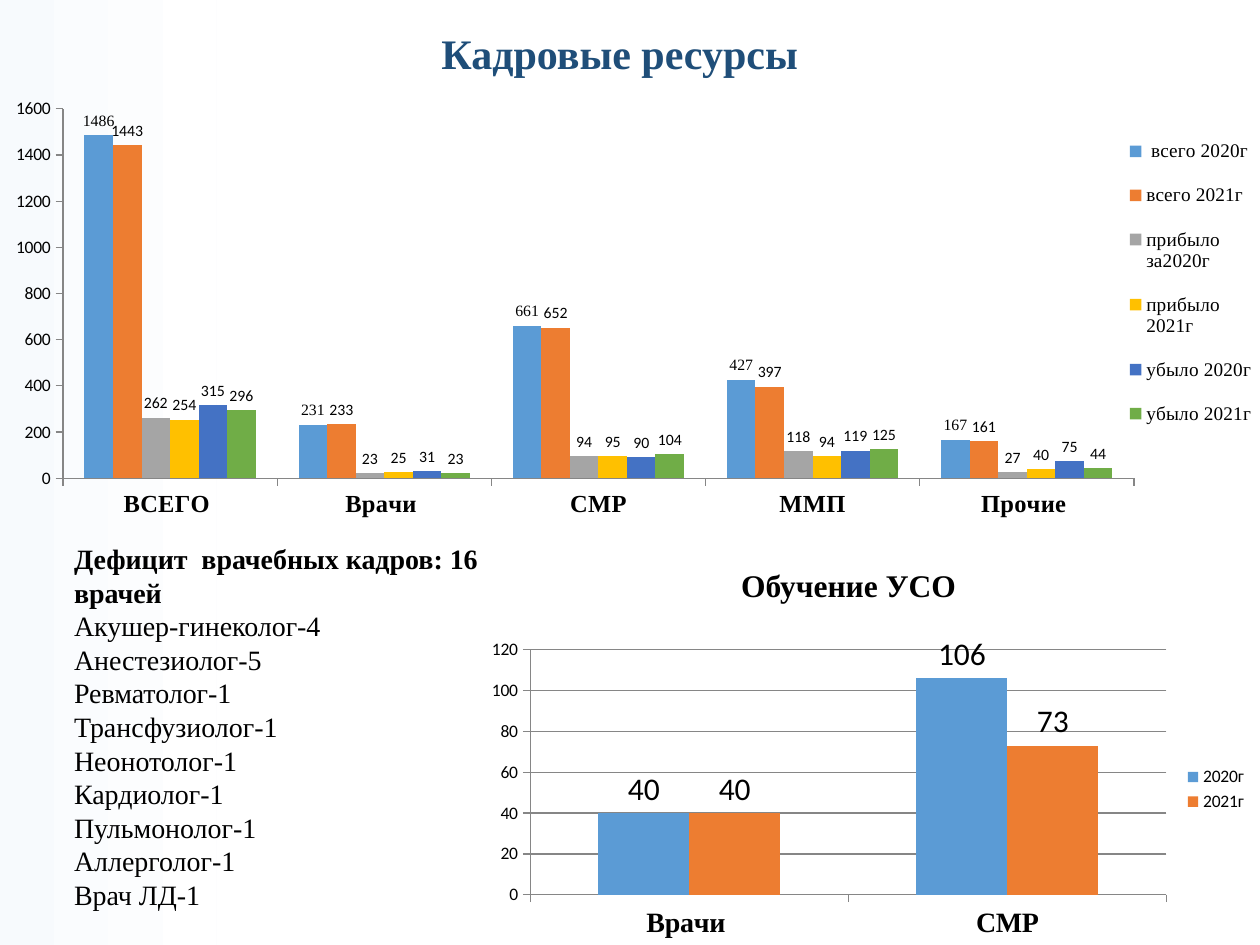
import pptx
import pptx.util
import pptx.chart.data
import pptx.dml.color
import pptx.enum.chart
import pptx.enum.shapes
import pptx.enum.text
import pptx.oxml
from pptx.util import Inches

SERIF = "Times New Roman"
SANS = "Calibri"
COLORS = ["5B9BD5", "ED7D31", "A5A5A5", "FFC000", "4472C4", "70AD47"]

STAFF_CATS = ["ВСЕГО ", "Врачи ", "СМР", "ММП", "Прочие "]
STAFF = {
    " всего 2020г": [1486, 231, 661, 427, 167],
    "всего 2021г": [1443, 233, 652, 397, 161],
    "прибыло  за2020г": [262, 23, 94, 118, 27],
    "прибыло 2021г": [254, 25, 95, 94, 40],
    "убыло 2020г": [315, 31, 90, 119, 75],
    "убыло 2021г": [296, 23, 104, 125, 44],
}
STUDY_CATS = ["Врачи ", "СМР"]
STUDY = {"2020г": [40, 106], "2021г": [40, 73]}

LACK = [
    "Дефицит  врачебных кадров: 16 врачей",
    "Акушер-гинеколог-4",
    "Анестезиолог-5",
    "Ревматолог-1",
    "Трансфузиолог-1",
    "Неонотолог-1",
    "Кардиолог-1",
    "Пульмонолог-1",
    "Аллерголог-1",
    "Врач ЛД-1",
]


def color(code):
    return pptx.dml.color.RGBColor.from_string(code)


def set_font(font, size, name=SANS, bold=False, code="000000"):
    font.size = pptx.util.Pt(size)
    font.name = name
    font.bold = bold
    font.color.rgb = color(code)


def add_band(slide):
    band = slide.shapes.add_shape(
        pptx.enum.shapes.MSO_SHAPE.RECTANGLE, 0, 0, Inches(1.72), Inches(7.5))
    band.shadow.inherit = False
    band.line.fill.background()
    band.fill.gradient()
    band.fill.gradient_angle = 0
    for stop, place, code in zip(band.fill.gradient_stops, (0, 1), ("F7FAFD", "FFFFFF")):
        stop.position = place
        stop.color.rgb = color(code)


def add_text(slide, box, lines, size, code="000000", center=False, middle=False):
    frame = slide.shapes.add_textbox(*map(Inches, box)).text_frame
    frame.word_wrap = True
    if middle:
        frame.vertical_anchor = pptx.enum.text.MSO_ANCHOR.MIDDLE
    frame.text = "\n".join(lines)
    for i, para in enumerate(frame.paragraphs):
        set_font(para.font, size, SERIF, i == 0, code)
        if center:
            para.alignment = pptx.enum.text.PP_ALIGN.CENTER


def set_layout(parent, box, inner=False):
    for old in parent.findall(pptx.oxml.ns.qn("c:layout")):
        parent.remove(old)
    target = '<c:layoutTarget val="inner"/>' if inner else ""
    modes = "".join(f'<c:{k}Mode val="edge"/>' for k in "xy")
    sizes = "".join(f'<c:{k} val="{v}"/>' for k, v in zip("xywh", box))
    layout = pptx.oxml.parse_xml(
        f'<c:layout {pptx.oxml.ns.nsdecls("c")}><c:manualLayout>'
        f"{target}{modes}{sizes}</c:manualLayout></c:layout>")
    if inner:
        parent.insert(0, layout)
    else:
        parent.find(pptx.oxml.ns.qn("c:legendPos")).addnext(layout)


def style_axis(axis, size, name=SANS, bold=False, grid=False):
    set_font(axis.tick_labels.font, size, name, bold)
    axis.major_tick_mark = pptx.enum.chart.XL_TICK_MARK.OUTSIDE
    axis.format.line.color.rgb = color("868686")
    axis.has_major_gridlines = grid
    if grid:
        axis.major_gridlines.format.line.color.rgb = color("868686")


def add_bars(slide, box, cats, rows, cat_size, label_size, key_size, key_font, grid):
    data = pptx.chart.data.CategoryChartData()
    data.categories = cats
    for name, vals in rows.items():
        data.add_series(name, vals)
    kind = pptx.enum.chart.XL_CHART_TYPE.COLUMN_CLUSTERED
    chart = slide.shapes.add_chart(kind, *map(Inches, box), data).chart
    set_font(chart.font, 18)
    chart.has_title = False
    style_axis(chart.category_axis, cat_size, SERIF, True)
    style_axis(chart.value_axis, 10, grid=grid)
    chart.has_legend = True
    chart.legend.position = pptx.enum.chart.XL_LEGEND_POSITION.RIGHT
    chart.legend.include_in_layout = False
    set_font(chart.legend.font, key_size, key_font)
    plot = chart.plots[0]
    plot.gap_width = 150
    plot.vary_by_categories = False
    for row, code in zip(plot.series, COLORS):
        row.format.fill.solid()
        row.format.fill.fore_color.rgb = color(code)
        row.data_labels.show_value = True
        row.data_labels.position = pptx.enum.chart.XL_LABEL_POSITION.OUTSIDE_END
        set_font(row.data_labels.font, label_size)
    return chart


def main():
    deck = pptx.Presentation()
    deck.slide_width, deck.slide_height = Inches(10), Inches(7.5)
    slide = deck.slides.add_slide(deck.slide_layouts[6])
    add_band(slide)
    add_text(slide, (0.65, 0.17, 8.62, 0.49), ["Кадровые ресурсы "], 24,
             "1F4E79", center=True, middle=True)
    staff = add_bars(slide, (0, 0.76, 10, 3.49), STAFF_CATS, STAFF,
                     14, 9, 11, SERIF, False)
    set_font(staff.plots[0].series[0].data_labels.font, 9, SERIF)
    area = staff.element.chart.plotArea
    set_layout(area, (0.05, 0.03, 0.85, 0.84), inner=True)
    set_layout(staff.legend.element if hasattr(staff.legend, "element")
               else area.getnext(), (0.89, 0.05, 0.11, 0.75))
    add_text(slide, (0.49, 4.25, 3.53, 3.06), LACK, 16)
    add_bars(slide, (3.78, 5.03, 6.22, 2.47), STUDY_CATS, STUDY,
             16, 18, 10, SANS, True)
    add_text(slide, (4.68, 4.44, 4.11, 0.4), ["Обучение УСО"], 18, center=True)
    deck.save("out.pptx")


if __name__ == "__main__":
    main()
